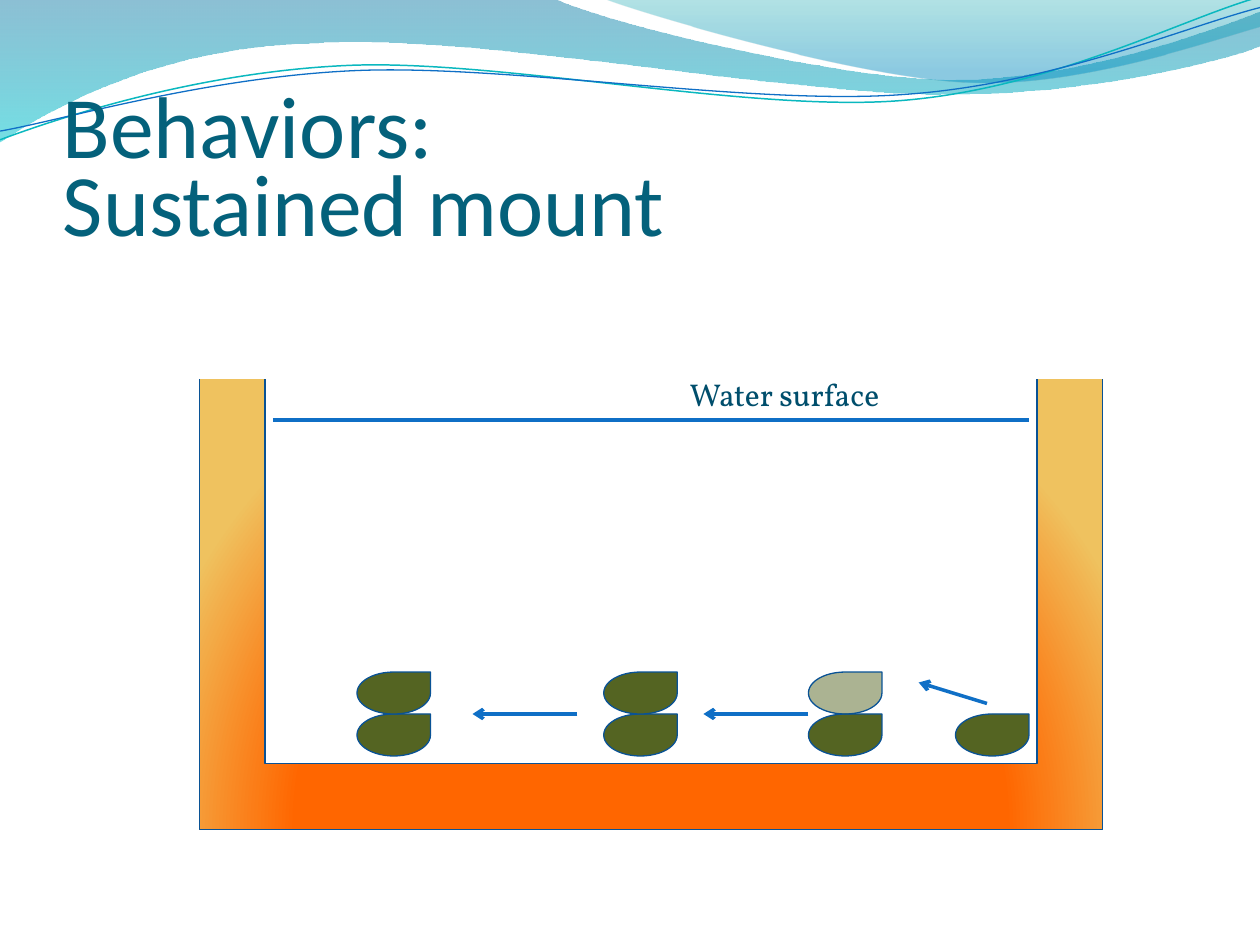
"""Builds the slide on the sustained mount behavior."""
from lxml.etree import SubElement
from pptx import Presentation
from pptx.dml.color import RGBColor
from pptx.enum.shapes import MSO_CONNECTOR as Line, MSO_SHAPE as Shape
from pptx.enum.text import MSO_ANCHOR as Anchor
from pptx.oxml import parse_xml
from pptx.oxml.ns import nsdecls, qn
from pptx.util import Pt

COLORS = {
    "title": "04617B", "label": "004E6C", "white": "FFFFFF",
    "blue": "0F6FC6", "teal": "0AB8BF", "outline": "095295", "shell": "546422",
    "orange": "FF6600", "sand": "EFC25F",
    "deep": "0074A1", "aqua": "00C6CF", "green": "00A1A9", "sky": "008BBF",
}
DOWN = '<a:lin ang="5400000" scaled="0"/>'
FROM_BOTTOM = ('<a:path path="circle"><a:fillToRect l="50000" t="100000" '
               'r="50000" b="0"/></a:path>')
BANDS = [
    ([(0, 0), (316.8, -0.7), (342.7, 12.2, 478.1, 45.4, 545.8, 45.4),
      (614.2, 45.4, 689.8, 18.7, 720, 6.5), (720.7, 25.9),
      (709.2, 31.7, 626.4, 54.7, 537.1, 54), (447.8, 54, 275, 20.2, 185, 24.5),
      (92.9, 25.9, 33.1, 59.8, -0.7, 81.4)],
     [(0, "deep", 45), (100, "aqua", 55)]),
    ([(344.9, -0.7), (366.5, 7.9, 491, 44.6, 553.7, 46.8),
      (616.3, 49.7, 691.9, 23, 720, 15.1), (720, 0)],
     [(0, "green", 30), (80, "sky", 45)]),
]
RIPPLES = [
    ([(0, 79.9), (34.6, 67, 113.8, 41, 199.4, 37.4),
      (284.4, 33.8, 427, 64.1, 513.4, 57.6),
      (599.8, 51.1, 675.4, 10.8, 718.6, -1.4)], "teal", 0.85),
    ([(0, 74.9), (33.8, 69.1, 118.1, 43.9, 203.8, 40.3),
      (290.2, 36.7, 429.8, 60.5, 516.2, 54),
      (601.9, 48.2, 677.5, 15.1, 720, 4.3)], "blue", 0.75),
]


class Painter:
    """Holds the style and the current slide."""

    def __init__(self, slide):
        self.shapes = slide.shapes

    def color(self, name):
        """Return a named colour."""
        return RGBColor.from_string(COLORS[name])

    def stroke(self, s, color, width):
        """Set or remove the outline of a shape."""
        if color:
            s.line.color.rgb = self.color(color)
            s.line.width = Pt(width)
        else:
            s.line.fill.background()

    def gradient(self, s, stops, direction):
        """Fill a shape with a gradient of (position, colour, opacity) stops."""
        gs = "".join(
            f'<a:gs pos="{pos * 1000}"><a:srgbClr val="{COLORS[name]}">'
            f'<a:alpha val="{alpha * 1000}"/></a:srgbClr></a:gs>'
            for pos, name, alpha in stops)
        s.fill.solid()
        pr = s.element.spPr
        pr.replace(pr.find(qn("a:solidFill")), parse_xml(
            f'<a:gradFill {nsdecls("a")} rotWithShape="1"><a:gsLst>{gs}</a:gsLst>'
            f'{direction}</a:gradFill>'))

    def wave(self, outline, stops=None, line=None, width=0.75):
        """Draw a curved band, or an open curve when there are no stops."""
        points = [(Pt(part[i]), Pt(part[i + 1]))
                  for part in outline for i in range(0, len(part), 2)]
        builder = self.shapes.build_freeform(*points[0])
        builder.add_line_segments(points[1:], close=bool(stops))
        s = builder.convert_to_shape()
        segments = s.element.spPr.iter(qn("a:lnTo"))
        segments = iter(list(segments))
        for part in outline[1:]:
            first = next(segments)
            if len(part) == 6:
                first.tag = qn("a:cubicBezTo")
                for _ in range(2):
                    extra = next(segments)
                    first.append(extra[0])
                    extra.getparent().remove(extra)
        s.shadow.inherit = False
        self.stroke(s, line, width)
        if stops:
            self.gradient(s, stops, DOWN)
        else:
            s.fill.background()

    def shape(self, kind, box, fill, line, alpha=100):
        """Draw a preset shape with a plain fill."""
        s = self.shapes.add_shape(kind, *map(Pt, box))
        s.shadow.inherit = False
        s.fill.solid()
        s.fill.fore_color.rgb = self.color(fill)
        self.stroke(s, line, 0.75)
        if alpha < 100:
            clr = s.element.spPr.find(qn("a:solidFill"))[0]
            SubElement(clr, qn("a:alpha"), val=str(alpha * 1000))
        return s

    def shell(self, x, y, alpha=100):
        """Draw one animal."""
        self.shape(Shape.TEAR, (x, y, 42, 24), "shell", "outline", alpha)

    def line(self, start, end, arrow=False):
        """Draw a straight line, with an arrowhead at its end if wanted."""
        s = self.shapes.add_connector(Line.STRAIGHT, *map(Pt, start + end))
        self.stroke(s, "blue", 2)
        if arrow:
            SubElement(s.element.spPr.find(qn("a:ln")), qn("a:tailEnd"), type="arrow")
        SubElement(s.element.spPr, qn("a:effectLst"))

    def text(self, box, words, size, font, color, **frame):
        """Write a line of text."""
        tf = self.shapes.add_textbox(*map(Pt, box)).text_frame
        for key, value in {"word_wrap": True, **frame}.items():
            setattr(tf, key, value)
        r = tf.paragraphs[0].add_run()
        r.text = words
        for key, value in {"size": Pt(size), "name": font}.items():
            setattr(r.font, key, value)
        r.font.color.rgb = self.color(color)


def main():
    """Build and save the slide."""
    prs = Presentation()
    prs.slide_width, prs.slide_height = Pt(720), Pt(540)
    p = Painter(prs.slides.add_slide(prs.slide_layouts[6]))

    for outline, stops in BANDS:
        p.wave(outline, stops)
    for outline, color, width in RIPPLES:
        p.wave(outline, line=color, width=width)

    tank = p.shape(Shape.FRAME, (114, 174, 516, 300), "orange", "outline")
    p.gradient(tank, [(0, "orange", 100), (68, "orange", 100), (100, "sand", 100)],
               FROM_BOTTOM)
    p.shape(Shape.RECTANGLE, (90, 91.5, 570, 124.5), "white", "white")

    heading = {"vertical_anchor": Anchor.BOTTOM, "margin_left": 0,
               "margin_right": 0, "margin_bottom": 0}
    for top, words in ((55, "Sustained mount"), (10.5, "Behaviors:")):
        p.text((36, top, 648, 90), words, 50, "Calibri", "title", **heading)

    p.line((156, 240), (588, 240))
    p.text((387, 211, 204, 29), "Water surface", 18, "Vollkorn", "label")

    floor, upper = 408, 384
    for x, alpha in ((204, 100), (345, 100), (462, 49)):
        p.shell(x, floor)
        p.shell(x, upper, alpha)
    p.shell(546, floor)
    for x in (330, 462):
        p.line((x, floor), (x - 60, floor), arrow=True)
    p.line((564, 402), (525, 390), arrow=True)

    prs.save("out.pptx")


if __name__ == "__main__":
    main()
